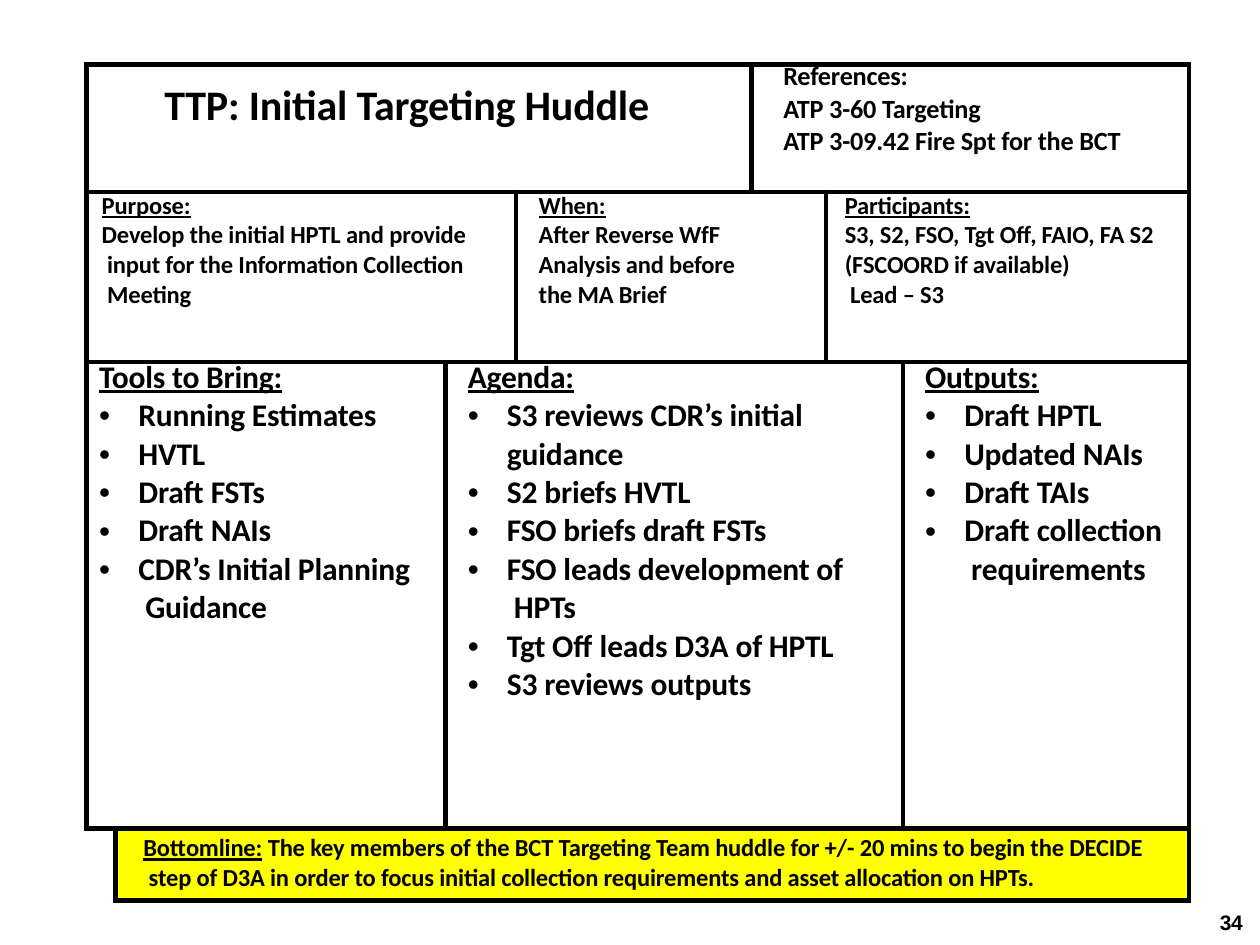
from copy import deepcopy

from lxml import etree
from pptx import Presentation
from pptx import util as u
from pptx.dml import color
from pptx.enum import text
from pptx.oxml import ns

BLACK, YELLOW = "000000", "FFFF00"
COLS = [0.58, 6.65, 1.42, 4.75, 1.5, 1.55, 5.77]
ROWS = [2.57, 3.43, 9.4, 1.45]

# row, column, columns spanned, size, heading leading, indent, hanging indent, lines
CELLS = [
    (0, 4, 3, 15, 16.3, 0.64, 0, [
        "References:", "ATP 3-60 Targeting", "ATP 3-09.42 Fire Spt for the BCT"]),
    (1, 0, 3, 14, 16.4, 0.3, 0, [
        "Purpose:",
        "Develop the initial HPTL and provide\v input for the Information Collection\v Meeting"]),
    (1, 3, 2, 14, 16.4, 0.46, 0, [
        "When:", "After Reverse WfF\vAnalysis and before\vthe MA Brief"]),
    (1, 5, 2, 14, 16.4, 0.38, 0, [
        "Participants:", "S3, S2, FSO, Tgt Off, FAIO, FA S2",
        "(FSCOORD if available)\v Lead – S3"]),
    (2, 0, 2, 18, 19.7, 0.25, 0.79, [
        "Tools to Bring:", "Running Estimates", "HVTL", "Draft FSTs", "Draft NAIs",
        "CDR’s Initial Planning\v Guidance"]),
    (2, 2, 4, 18, 19.7, 0.45, 0.79, [
        "Agenda:", "S3 reviews CDR’s initial\vguidance", "S2 briefs HVTL",
        "FSO briefs draft FSTs", "FSO leads development of\v HPTs",
        "Tgt Off leads D3A of HPTL", "S3 reviews outputs"]),
    (2, 6, 1, 18, 19.7, 0.45, 0.79, [
        "Outputs:", "Draft HPTL", "Updated NAIs", "Draft TAIs",
        "Draft collection\v requirements"]),
]


def rgb(code):
    """Turn a hex string into a colour."""
    return color.RGBColor.from_string(code)


def style(para, size, face="Calibri"):
    """Format the runs and line breaks of a paragraph."""
    for run in para.runs:
        font = run.font
        font.size, font.name, font.bold = u.Pt(size), face, True
        font.color.rgb = rgb(BLACK)
        run._r.get_or_add_rPr().set("spc", "-10")
    for mark in para._p.findall(ns.qn("a:br")):
        mark.insert(0, deepcopy(para.runs[0]._r.rPr))


def indent(para, left, hang=0):
    """Indent a paragraph, with a bullet if it hangs."""
    props = para._p.get_or_add_pPr()
    props.set("marL", str(u.Cm(left + hang)))
    props.set("indent", str(-u.Cm(hang)))
    if hang:
        etree.SubElement(props, ns.qn("a:buFont"), typeface="Arial")
        etree.SubElement(props, ns.qn("a:buChar"), char="•")


def edge(cell, sides):
    """Draw the named sides of a cell and clear the others."""
    props = cell._tc.get_or_add_tcPr()
    for side in "LRTB":
        line = etree.SubElement(props, ns.qn("a:ln" + side), w=str(u.Pt(3)))
        if side in sides:
            fill = etree.SubElement(line, ns.qn("a:solidFill"))
            etree.SubElement(fill, ns.qn("a:srgbClr"), val=BLACK)
        else:
            etree.SubElement(line, ns.qn("a:noFill"))


def grid(slide):
    """Add the bordered, unfilled table."""
    frame = slide.shapes.add_table(
        len(ROWS), len(COLS), u.Cm(1.75), u.Cm(1.3), u.Cm(sum(COLS)), u.Cm(sum(ROWS)))
    table = frame.table
    table.first_row = table.horz_banding = False
    for col, width in zip(table.columns, COLS):
        col.width = u.Cm(width)
    for row, height in zip(table.rows, ROWS):
        row.height = u.Cm(height)
    corner = len(ROWS) - 1, 0
    for r in range(len(ROWS)):
        for c in range(len(COLS)):
            cell = table.cell(r, c)
            cell.margin_left = cell.margin_right = 0
            cell.margin_top = cell.margin_bottom = 0
            edge(cell, "RT" if (r, c) == corner else "LRTB")
            cell.fill.background()
    table.cell(*corner).text_frame.paragraphs[0].font.size = u.Pt(14)
    return table


def join(table, row, col, span):
    """Merge cells along a row and return the first."""
    cell = table.cell(row, col)
    if span > 1:
        cell.merge(table.cell(row, col + span - 1))
    return cell


def head(table):
    """Write the title cell."""
    cell = join(table, 0, 0, 4)
    cell.margin_top, cell.margin_right = u.Cm(0.33), u.Cm(0.5)
    cell.text_frame.text = "TTP: Initial Targeting Huddle"
    para = cell.text_frame.paragraphs[0]
    para.alignment = text.PP_ALIGN.CENTER
    style(para, 24)


def block(table, row, col, span, size, lead, left, hang, lines):
    """Write a cell with a heading and its lines."""
    frame = join(table, row, col, span).text_frame
    frame.text = "\n".join(lines)
    first, *rest = frame.paragraphs
    indent(first, left)
    first.line_spacing = u.Pt(lead)
    first.runs[0].font.underline = row > 0
    for para in rest:
        indent(para, left, hang)
    for para in frame.paragraphs:
        style(para, size)


def foot(table):
    """Write the yellow summary cell."""
    cell = join(table, 3, 1, 6)
    cell.margin_top = u.Cm(0.1)
    cell.fill.solid()
    cell.fill.fore_color.rgb = rgb(YELLOW)
    para = cell.text_frame.paragraphs[0]
    para.text = (
        "Bottomline:\v The key members of the BCT Targeting Team huddle for +/- 20 mins "
        "to begin the DECIDE\v step of D3A in order to focus initial collection "
        "requirements and asset allocation on HPTs.")
    para._p.remove(para._p.find(ns.qn("a:br")))
    para.runs[0].font.underline = True
    indent(para, 0.56)
    style(para, 14)


def number(slide):
    """Add the page number."""
    box = slide.shapes.add_textbox(u.Cm(24.49), u.Cm(18.34), u.Cm(0.71), u.Cm(0.53))
    frame = box.text_frame
    frame.margin_left = frame.margin_right = 0
    frame.margin_top = frame.margin_bottom = 0
    frame.word_wrap = True
    frame.text = "34"
    para = frame.paragraphs[0]
    indent(para, 0.1)
    para.line_spacing = u.Pt(14.2)
    style(para, 12, "Arial")


def main():
    """Build the slide."""
    deck = Presentation()
    deck.slide_width, deck.slide_height = u.Cm(25.4), u.Cm(19.05)
    slide = deck.slides.add_slide(deck.slide_layouts[6])
    table = grid(slide)
    head(table)
    for cell in CELLS:
        block(table, *cell)
    foot(table)
    number(slide)
    deck.save("out.pptx")


if __name__ == "__main__":
    main()
